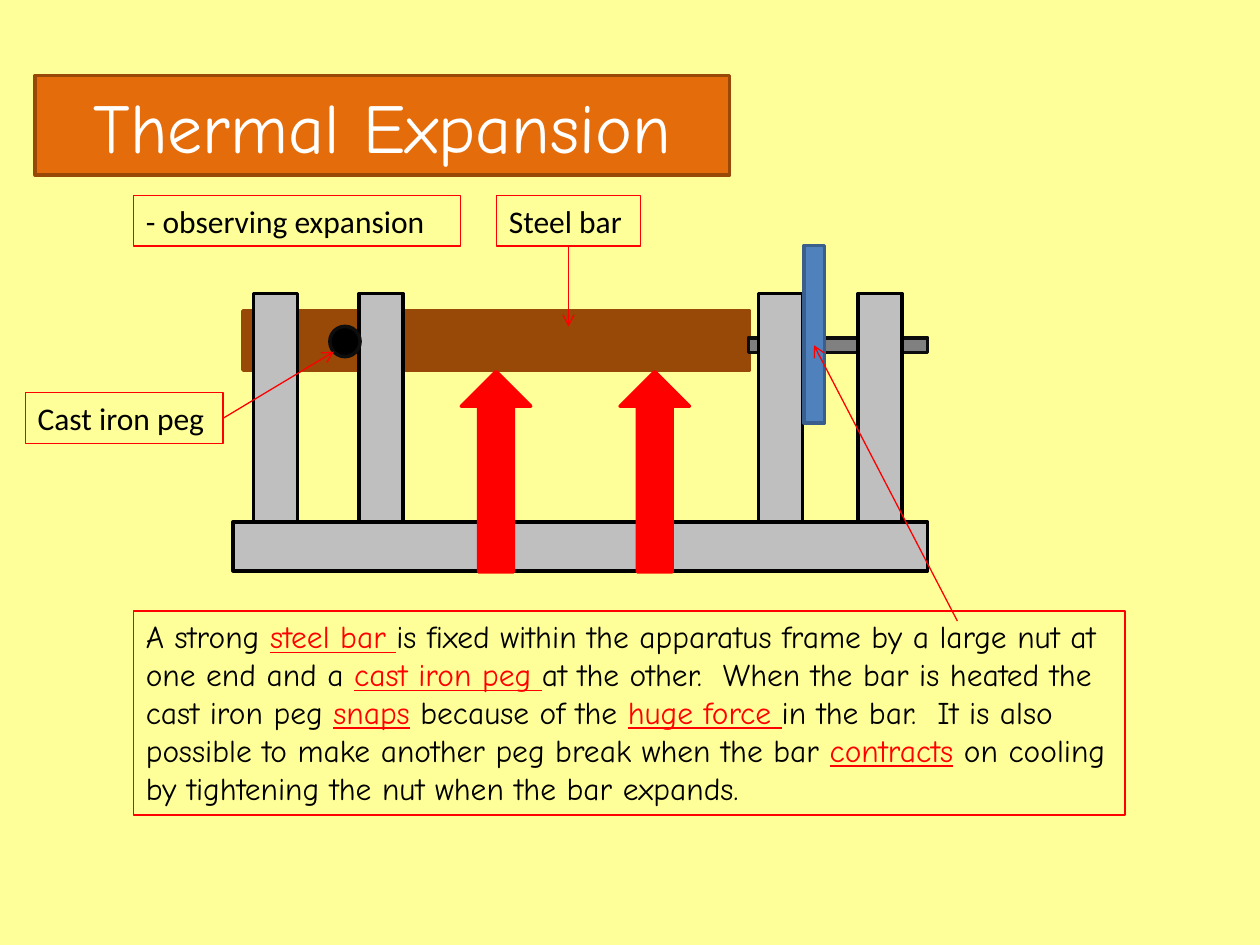
"""Build the slide on the thermal expansion of a heated steel bar."""
from dataclasses import dataclass
from typing import Any

from lxml.etree import SubElement as Sub
from pptx import Presentation
from pptx.dml.color import RGBColor
from pptx.enum.shapes import MSO_CONNECTOR as Link, MSO_SHAPE as Kind
from pptx.enum.text import MSO_ANCHOR as Anchor, MSO_AUTO_SIZE as Fit, PP_ALIGN as Align
from pptx.oxml.ns import qn
from pptx.util import Cm, Pt

CREAM = RGBColor(0xFF, 0xFF, 0x99)
ORANGE = RGBColor(0xE4, 0x6C, 0x0A)
BROWN = RGBColor(0x98, 0x48, 0x07)
SILVER = RGBColor(0xBF, 0xBF, 0xBF)
GREY = RGBColor(0x80, 0x80, 0x80)
COAL = RGBColor(0x0D, 0x0D, 0x0D)
BLACK = RGBColor(0, 0, 0)
WHITE = RGBColor(0xFF, 0xFF, 0xFF)
RED = RGBColor(0xFF, 0, 0)
BLUE = RGBColor(0x4F, 0x81, 0xBD)
NAVY = RGBColor(0x3A, 0x5F, 0x8C)

PLAIN = {"name": "Calibri", "size": Pt(18)}
COMIC = {"name": "Comic Neue", "size": Pt(18)}
HEAD = {"name": "Comic Neue", "size": Pt(40), "bold": False}


@dataclass(frozen=True)
class Box:
    left: float
    top: float
    width: float
    height: float

    def place(self) -> tuple:
        return Cm(self.left), Cm(self.top), Cm(self.width), Cm(self.height)


@dataclass(frozen=True)
class Part:
    box: Box
    fill: RGBColor
    edge: RGBColor = BLACK
    kind: Kind = Kind.RECTANGLE


@dataclass(frozen=True)
class Label:
    box: Box
    runs: tuple
    font: dict


@dataclass(frozen=True)
class Arrow:
    start: tuple
    end: tuple


PARTS = [
    Part(Box(4.7, 10.52, 14, 0.99), SILVER),
    Part(Box(4.9, 6.27, 10.21, 1.19), BROWN, BROWN),
    Part(Box(15.09, 6.81, 3.61, 0.3), GREY, COAL),
    *(Part(Box(x, 5.92, 0.89, 4.6), SILVER) for x in (5.11, 7.24, 15.29, 17.3)),
    Part(Box(6.65, 6.58, 0.61, 0.61), BLACK, COAL, Kind.OVAL),
    Part(Box(16.21, 4.95, 0.41, 3.58), BLUE, NAVY),
    *(Part(Box(x, 7.49, 1.4, 4.04), RED, RED, Kind.UP_ARROW) for x in (9.3, 12.5)),
]

NOTE = (
    "A strong ", "steel bar ",
    "is fixed within the apparatus frame by a large nut at one end and a ",
    "cast iron peg ",
    "at the other.  When the bar is heated the cast iron peg ", "snaps",
    " because of the ", "huge force ",
    "in the bar.  It is also possible to make another peg break when the bar ",
    "contracts", " on cooling by tightening the nut when the bar expands.",
)

LABELS = [
    Label(Box(2.69, 3.94, 6.6, 1.02), ("- observing expansion",), PLAIN),
    Label(Box(0.51, 7.92, 3.99, 1.02), ("Cast iron peg",), PLAIN),
    Label(Box(10.01, 3.94, 2.9, 1.02), ("Steel bar",), PLAIN),
    Label(Box(2.69, 12.32, 19.99, 4.11), NOTE, COMIC),
]

ARROWS = [
    Arrow((4.5, 8.43), (6.73, 7.09)),
    Arrow((11.46, 4.95), (11.46, 6.58)),
    Arrow((19.3, 12.52), (16.41, 6.96)),
]


def apply(thing: Any, values: dict) -> None:
    for name, value in values.items():
        setattr(thing, name, value)


def stroke(line: Any, tint: RGBColor, width: float) -> None:
    line.color.rgb = tint
    line.width = Pt(width)


def paint(shape: Any, fill: RGBColor, edge: RGBColor) -> None:
    shape.fill.solid()
    shape.fill.fore_color.rgb = fill
    stroke(shape.line, edge, 2)


def write(para: Any, text: str, font: dict, tint: RGBColor) -> None:
    run = para.add_run()
    run.text = text
    apply(run.font, font)
    run.font.color.rgb = tint


def draw_title(title: Any, text: str, box: Box) -> None:
    apply(title, dict(zip(("left", "top", "width", "height"), box.place())))
    shape = Sub(title.element.spPr, qn("a:prstGeom"), prst="roundRect")
    Sub(shape, qn("a:avLst"))
    paint(title, ORANGE, BROWN)
    frame = title.text_frame
    apply(frame, {"auto_size": Fit.NONE, "vertical_anchor": Anchor.MIDDLE})
    frame.paragraphs[0].alignment = Align.CENTER
    write(frame.paragraphs[0], text, HEAD, WHITE)


def draw_part(shapes: Any, part: Part) -> None:
    shape = shapes.add_shape(part.kind, *part.box.place())
    shape.shadow.inherit = False
    paint(shape, part.fill, part.edge)


def draw_label(shapes: Any, label: Label) -> None:
    shape = shapes.add_textbox(*label.box.place())
    stroke(shape.line, RED, 0.75)
    frame = shape.text_frame
    apply(frame, {"word_wrap": True, "auto_size": Fit.SHAPE_TO_FIT_TEXT})
    for place, text in enumerate(label.runs):
        key = place % 2 == 1
        write(frame.paragraphs[0], text, {**label.font, "underline": key}, RED if key else BLACK)


def draw_arrow(shapes: Any, arrow: Arrow) -> None:
    ends = (Cm(n) for n in arrow.start + arrow.end)
    link = shapes.add_connector(Link.STRAIGHT, *ends)
    stroke(link.line, RED, 0.75)
    props = link.element.spPr
    Sub(props.find(qn("a:ln")), qn("a:tailEnd"), type="arrow")
    Sub(props, qn("a:effectLst"))


def main() -> None:
    deck = Presentation()
    apply(deck, {"slide_width": Cm(25.4), "slide_height": Cm(19.05)})
    slide = deck.slides.add_slide(deck.slide_layouts.get_by_name("Title Only"))
    slide.background.fill.solid()
    slide.background.fill.fore_color.rgb = CREAM
    draw_title(slide.shapes.title, "Thermal Expansion", Box(0.71, 1.52, 14, 2.01))
    for draw, things in ((draw_part, PARTS), (draw_label, LABELS), (draw_arrow, ARROWS)):
        for thing in things:
            draw(slide.shapes, thing)
    deck.save("out.pptx")


if __name__ == "__main__":
    main()
